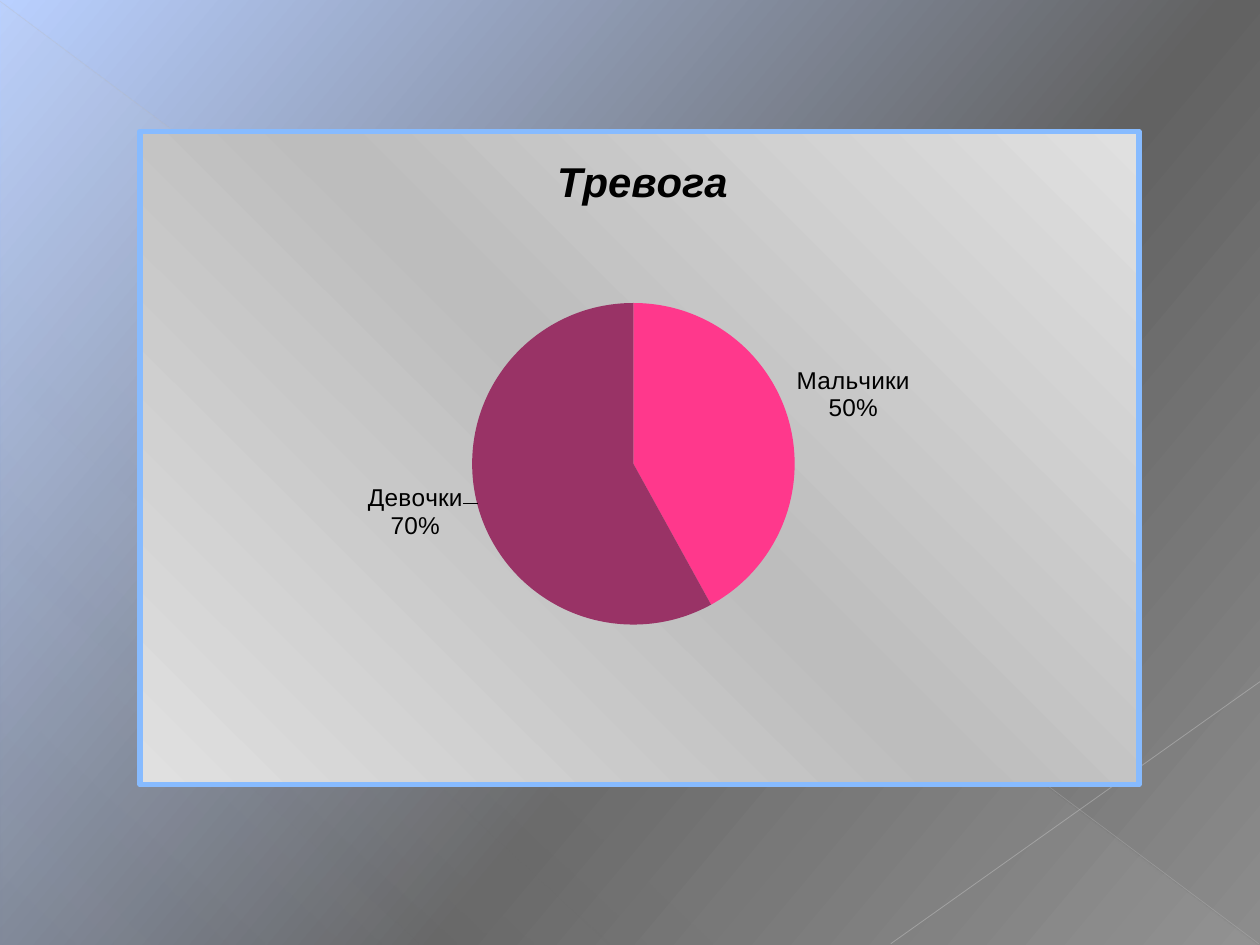
import lxml.etree
import pptx
import pptx.chart.data
import pptx.dml.color
import pptx.dml.fill
import pptx.enum.chart
import pptx.enum.shapes
import pptx.oxml
import pptx.oxml.ns
import pptx.util

Inches, Pt, qn = pptx.util.Inches, pptx.util.Pt, pptx.oxml.ns.qn
NS = pptx.oxml.ns.nsdecls("a", "c")

# Content: name, share of the pie, label value, colour, label shift
FONT = "Arial"
TITLE = "Тревога"
SLICES = [("Мальчики", 42, "50%", "FF388C", None),
          ("Девочки", 58, "70%", "993366", {"x": -0.007, "y": -0.032})]
CHART_BOX = (1.09, 1.02, 7.97, 5.23)
TITLE_POS = {"xMode": "edge", "yMode": "edge", "x": 0.41, "y": 0.024}
PLOT_POS = {"layoutTarget": "inner", "xMode": "edge", "yMode": "edge",
            "x": 0.119, "y": 0.263, "w": 0.75, "h": 0.492}

# Gradients: (position %, colour, opacity %) and angle
BACKGROUND = ([(0, "B9D0FF", 100), (60, "626262", 100), (100, "8C8C8C", 100)], 40)
CORNER = ([(0, "D2D2D2", 10), (70, "D2D2D2", 8), (100, "D2D2D2", 1)], 133)
PANEL = ([(0, "E0E0E0", 100), (50, "BDBDBD", 100), (100, "E0E0E0", 100)], 315)

# Thin lines: start, end, colour, width, opacity %
LINES = [((0, 0.01), (9.99, 7.49), "BFBFBF", 0.39, 35),
         ((10, 5.41), (7.07, 7.49), "C6C6C6", 0.47, 45)]


def rgb(color):
    return pptx.dml.color.RGBColor.from_string(color)


def set_gradient(fill, parent, stops, angle):
    """Give the fill's parent element a linear gradient."""
    fill.solid()
    gs = "".join(
        f'<a:gs pos="{pos * 1000}"><a:srgbClr val="{color}">'
        f'<a:alpha val="{alpha * 1000}"/></a:srgbClr></a:gs>'
        for pos, color, alpha in stops)
    grad = pptx.oxml.parse_xml(
        f'<a:gradFill {NS} rotWithShape="1"><a:gsLst>{gs}</a:gsLst>'
        f'<a:lin ang="{angle * 60000}" scaled="0"/></a:gradFill>')
    parent.replace(parent.find(qn("a:solidFill")), grad)


def set_layout(parent, after, **values):
    """Place a chart part by hand; after is the sibling it follows."""
    for old in parent.findall(qn("c:layout")):
        parent.remove(old)
    parts = "".join(f'<c:{k} val="{v}"/>' for k, v in values.items())
    new = pptx.oxml.parse_xml(
        f"<c:layout {NS}><c:manualLayout>{parts}</c:manualLayout></c:layout>")
    if after is None:
        parent.insert(0, new)
    else:
        after.addnext(new)


def format_font(font, size, color="000000", bold=False, italic=False):
    font.name, font.size, font.bold, font.italic = FONT, Pt(size), bold, italic
    font.color.rgb = rgb(color)


def add_text(tf, text, **style):
    for i, row in enumerate(text.split("\n")):
        p = tf.add_paragraph() if i else tf.paragraphs[0]
        r = p.add_run()
        r.text = row
        format_font(r.font, **style)


prs = pptx.Presentation()
prs.slide_width, prs.slide_height = Inches(10), Inches(7.5)
s = prs.slides.add_slide(prs.slide_layouts[6])

# Background and corner triangle
bg = s.background.fill
set_gradient(bg, s._element.cSld.find(qn("p:bg")).find(qn("p:bgPr")), *BACKGROUND)
sp = s.shapes.add_shape(pptx.enum.shapes.MSO_SHAPE.RIGHT_TRIANGLE,
                        *map(Inches, (0.01, 0.02, 9.98, 7.48)))
sp.shadow.inherit = False
sp.line.fill.background()
set_gradient(sp.fill, sp._element.spPr, *CORNER)

# Thin lines
for start, end, color, width, alpha in LINES:
    line = s.shapes.add_connector(pptx.enum.shapes.MSO_CONNECTOR.STRAIGHT,
                                  *map(Inches, start + end))
    line.line.width = Pt(width)
    line.line.color.rgb = rgb(color)
    spPr = line._element.spPr
    clr = spPr.find(".//" + qn("a:srgbClr"))
    lxml.etree.SubElement(clr, qn("a:alpha"), val=str(alpha * 1000))
    lxml.etree.SubElement(spPr, qn("a:effectLst"))

# Pie chart
data = pptx.chart.data.CategoryChartData()
data.categories = [name for name, *_ in SLICES]
data.add_series("Series 1", [share for _, share, *_ in SLICES])
chart = s.shapes.add_chart(pptx.enum.chart.XL_CHART_TYPE.PIE,
                           *map(Inches, CHART_BOX), data).chart
chart.has_legend = False
format_font(chart.font, size=10.5)
add_text(chart.chart_title.text_frame, TITLE, size=24, bold=True, italic=True)
title = chart.chart_title._element
set_layout(title, title.find(qn("c:tx")), **TITLE_POS)
chart.chart_title.include_in_layout = False
set_layout(chart._chartSpace.chart.plotArea, None, **PLOT_POS)
plot = chart.plots[0]
plot.vary_by_categories = True

# Labels for the whole series
outside = pptx.enum.chart.XL_LABEL_POSITION.OUTSIDE_END
labels = plot.series[0].data_labels
format_font(labels.font, size=14)
labels.number_format, labels.number_format_is_linked = "0%", False
labels.position = outside
labels.show_category_name, labels.show_value = True, False

# Slice colours and label texts
for i, (name, _, value, color, shift) in enumerate(SLICES):
    point = plot.series[0].points[i]
    point.format.fill.solid()
    point.format.fill.fore_color.rgb = rgb(color)
    add_text(point.data_label.text_frame, f"{name}\n{value}", size=14)
    point.data_label.position = outside
    dLbl = labels._element.findall(qn("c:dLbl"))[i]
    dLbl.find(qn("c:showCatName")).set("val", "1")
    dLbl.find(qn("c:showVal")).set("val", "0")
    if shift:
        set_layout(dLbl, dLbl.find(qn("c:idx")), **shift)

# Chart panel
panel = pptx.oxml.parse_xml(
    f'<c:spPr {NS}><a:ln w="{Pt(3)}"><a:solidFill><a:srgbClr val="87BBFF"/>'
    "</a:solidFill></a:ln></c:spPr>")
chart._chartSpace.chart.addnext(panel)
set_gradient(pptx.dml.fill.FillFormat.from_fill_parent(panel), panel, *PANEL)

prs.save("out.pptx")
